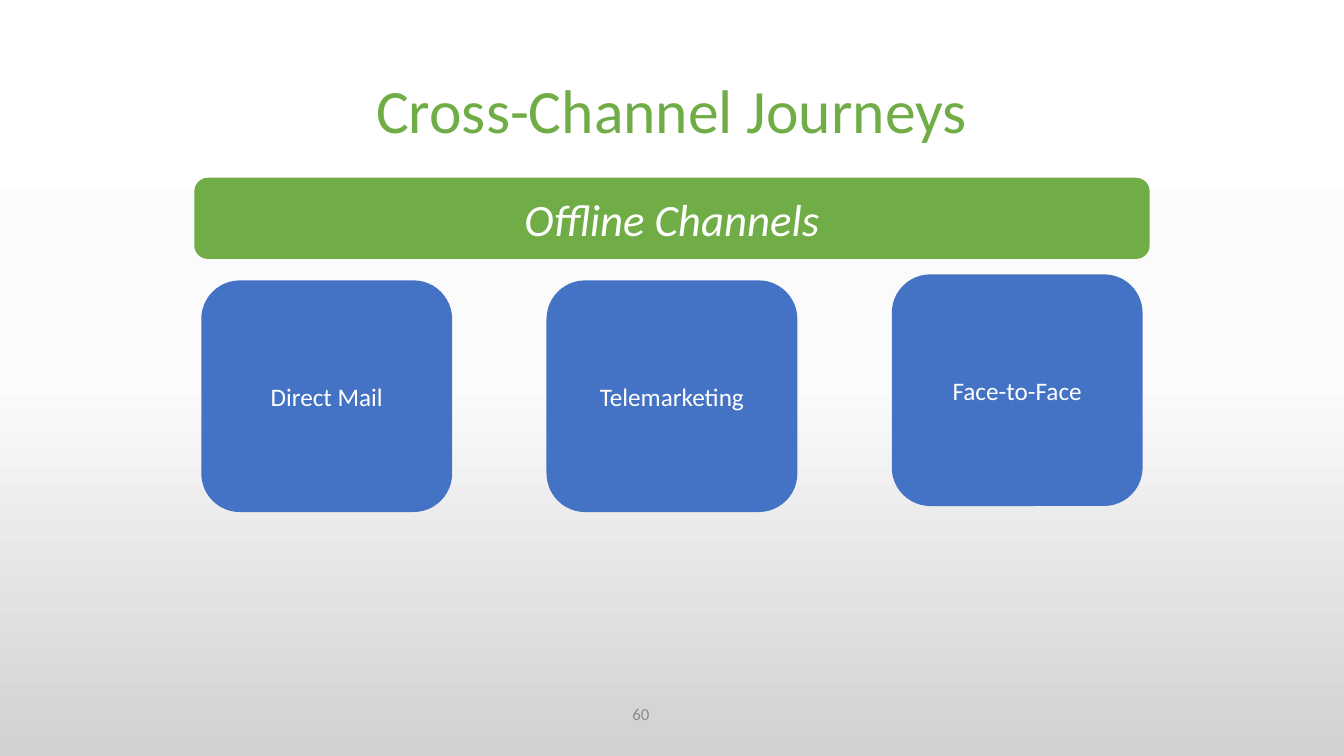
from copy import deepcopy

from pptx import Presentation
from pptx.dml.color import RGBColor
from pptx.enum import shapes, text
from pptx.oxml import ns
from pptx.util import Pt

GREEN = RGBColor(0x70, 0xAD, 0x47)
BLUE = RGBColor(0x44, 0x72, 0xC4)
WHITE = RGBColor(0xFF, 0xFF, 0xFF)
PALE = RGBColor(0xFB, 0xFB, 0xFB)
SILVER = RGBColor(0xD1, 0xD1, 0xD1)
GREY = RGBColor(0x8C, 0x8C, 0x8C)
FONT = "Calibri"
MID = text.PP_ALIGN.CENTER


def shade(slide):
    """Fill the background with a three-stop vertical gradient."""
    fill = slide.background.fill
    fill.gradient()
    fill.gradient_angle = 270
    stops = slide.element.find(".//" + ns.qn("a:gsLst"))
    stops.append(deepcopy(stops[-1]))
    for stop, place, color in zip(fill.gradient_stops, (0, 0.5, 1), (WHITE, PALE, SILVER)):
        stop.position = place
        stop.color.rgb = color


def write(shape, words, size, color, align=MID, italic=None):
    """Put one line of styled text in a shape."""
    frame = shape.text_frame
    frame.word_wrap = True
    frame.vertical_anchor = text.MSO_ANCHOR.MIDDLE
    para = frame.paragraphs[0]
    para.alignment = align
    run = para.add_run()
    run.text = words
    font = run.font
    font.name, font.size, font.italic = FONT, Pt(size), italic
    font.color.rgb = color
    return para


def label(slide, box, words, size, color, align=MID):
    """Add a text box and return its paragraph."""
    shape = slide.shapes.add_textbox(*map(Pt, box))
    return write(shape, words, size, color, align)


def tile(slide, box, words, size, color, italic=None):
    """Add a filled rounded rectangle with white text."""
    shape = slide.shapes.add_shape(shapes.MSO_SHAPE.ROUNDED_RECTANGLE, *map(Pt, box))
    shape.shadow.inherit = False
    shape.fill.solid()
    shape.fill.fore_color.rgb = color
    shape.line.fill.background()
    write(shape, words, size, WHITE, italic=italic)


def main():
    """Build and save the slide."""
    deck = Presentation()
    deck.slide_width, deck.slide_height = Pt(960), Pt(540)
    slide = deck.slides.add_slide(deck.slide_layouts[6])
    shade(slide)
    title = label(slide, (66, 28.8, 828, 104.4), "Cross-Channel Journeys", 44, GREEN)
    title.line_spacing = 0.9
    tile(slide, (138.8, 127, 682.4, 58), "Offline Channels", 32, GREEN, True)
    tops = (("Direct Mail", 200.3), ("Telemarketing", 200.3), ("Face-to-Face", 196))
    for col, (name, top) in enumerate(tops):
        tile(slide, (143.8 + 246.6 * col, top, 179.2, 165.5), name, 18, BLUE)
    label(slide, (255, 495.6, 216, 28.8), "60", 12, GREY, text.PP_ALIGN.RIGHT)
    deck.save("out.pptx")


if __name__ == "__main__":
    main()
